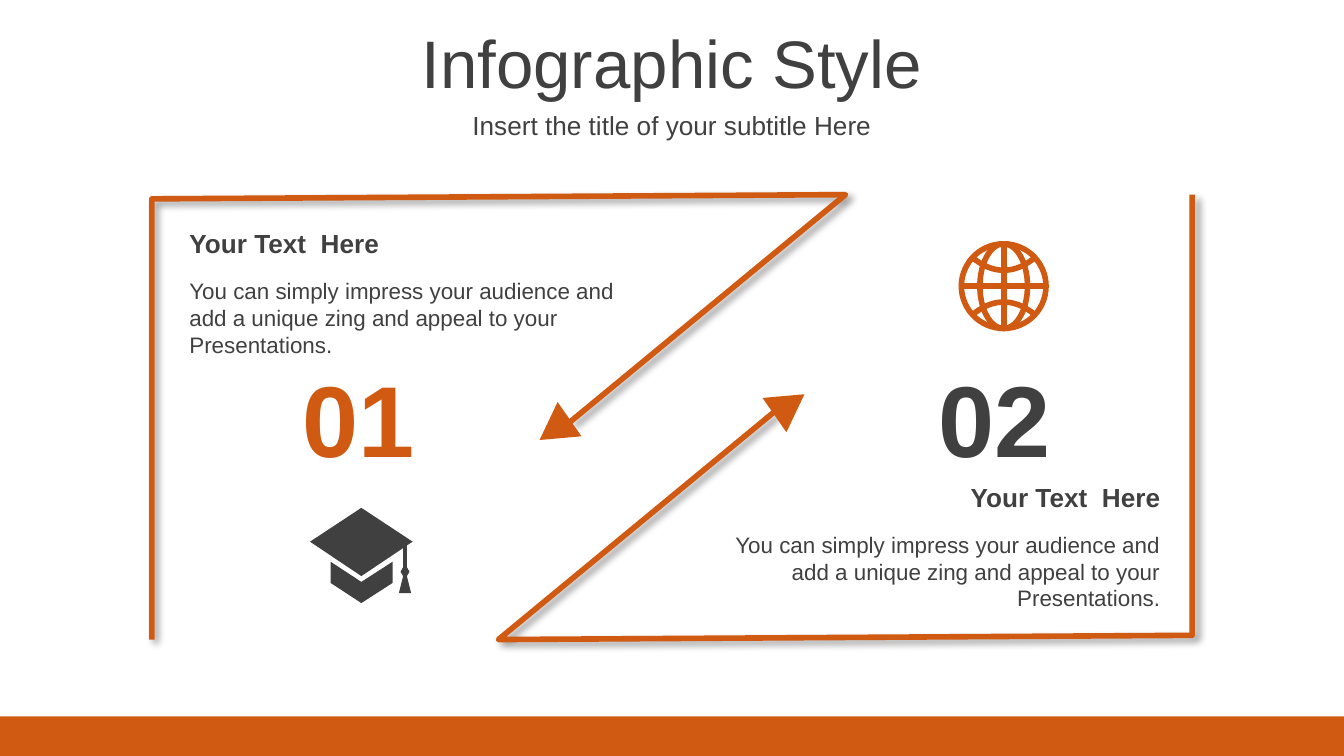
import math

from lxml import etree
from pptx import Presentation
from pptx import util as u
from pptx.dml.color import RGBColor
from pptx.enum import shapes, text
from pptx.oxml.ns import qn

COLORS = {"orange": "D15A12", "dark": "404040", "shadow": "000000"}
LEFT, CENTER, RIGHT = text.PP_ALIGN.LEFT, text.PP_ALIGN.CENTER, text.PP_ALIGN.RIGHT
TOP, MIDDLE = text.MSO_ANCHOR.TOP, text.MSO_ANCHOR.MIDDLE
WIDTH, HEIGHT = 25.4, 14.29

prs = Presentation()
prs.slide_width, prs.slide_height = u.Cm(WIDTH), u.Cm(HEIGHT)
slide = prs.slides.add_slide(prs.slide_layouts[6])


def add_label(words, box, size, color, align, anchor=TOP, bold=False):
    label = slide.shapes.add_textbox(*map(u.Cm, box))
    frame = label.text_frame
    frame.text = words
    frame.word_wrap = True
    frame.vertical_anchor = anchor
    paragraph = frame.paragraphs[0]
    paragraph.alignment = align
    font = paragraph.runs[0].font
    font.name, font.size, font.bold = "Arial", u.Pt(size), bold
    font.color.rgb = RGBColor.from_string(COLORS[color])


def add_outline(contours, color, closed=False):
    """Draw contours given in cm: filled if closed, else stroked at 3 pt."""
    contours = [[(u.Cm(x), u.Cm(y)) for x, y in points] for points in contours]
    builder = slide.shapes.build_freeform(*contours[0][0])
    for index, points in enumerate(contours):
        if index:
            builder.move_to(*points[0])
        builder.add_line_segments(points[1:], close=closed)
    outline = builder.convert_to_shape()
    outline.shadow.inherit = False
    rgb = RGBColor.from_string(COLORS[color])
    if closed:
        outline.fill.solid()
        outline.fill.fore_color.rgb = rgb
        outline.line.fill.background()
    else:
        outline.fill.background()
        outline.line.color.rgb = rgb
        outline.line.width = u.Pt(3)
        etree.SubElement(outline.line._get_or_add_ln(), qn("a:round"))
    return outline


# Footer band
footer = slide.shapes.add_shape(
    shapes.MSO_SHAPE.RECTANGLE, 0, u.Cm(13.54), u.Cm(WIDTH), u.Cm(HEIGHT - 13.54))
footer.shadow.inherit = False
footer.fill.solid()
footer.fill.fore_color.rgb = RGBColor.from_string(COLORS["orange"])
footer.line.fill.background()

# Headings
add_label("Infographic Style", (0, 0.36, WIDTH, 1.6), 36, "dark", CENTER, MIDDLE)
add_label("Insert the title of your subtitle Here", (0, 1.96, WIDTH, 0.79),
          14, "dark", CENTER, MIDDLE)

# Two arrow frames, the second being the first turned by half a circle
frame_points = [(2.87, 12.09), (2.87, 3.76), (15.98, 3.68), (10.77, 7.98)]
head_center, head_width, head_height = (10.48, 8.12), 0.79, 0.69
for half_turn in (False, True):
    path_points = [(WIDTH - x, 15.77 - y) if half_turn else (x, y)
                   for x, y in frame_points + [head_center]]
    arrow_frame = add_outline([path_points[:-1]], "orange")
    effects = arrow_frame._element.spPr.find(qn("a:effectLst"))
    shadow = etree.SubElement(
        effects, qn("a:outerShdw"), blurRad=str(u.Pt(4)), dist=str(u.Pt(3)),
        dir="2700000", algn="tl", rotWithShape="0")
    shade = etree.SubElement(shadow, qn("a:srgbClr"), val=COLORS["shadow"])
    etree.SubElement(shade, qn("a:alpha"), val="40000")

    head_x, head_y = path_points[-1]
    arrow_head = slide.shapes.add_shape(
        shapes.MSO_SHAPE.ISOSCELES_TRIANGLE,
        u.Cm(head_x - head_width / 2), u.Cm(head_y - head_height / 2),
        u.Cm(head_width), u.Cm(head_height))
    arrow_head.rotation = 55.2 if half_turn else 235.2
    arrow_head.shadow.inherit = False
    arrow_head.fill.solid()
    arrow_head.fill.fore_color.rgb = RGBColor.from_string(COLORS["orange"])
    arrow_head.line.fill.background()

# Numbers and descriptions
body = ("You can simply impress your audience and add a unique zing "
        "and appeal to your Presentations.")
for number, number_x, color, text_x, text_y, align in (
        ("01", 5.23, "orange", 3.33, 4.17, LEFT),
        ("02", 17.25, "dark", 13.21, 8.97, RIGHT)):
    add_label(number, (number_x, 6.6, 3.1, 2.57), 54, color, CENTER, MIDDLE, True)
    add_label(body, (text_x, text_y + 0.94, 8.97, 1.8), 12, "dark", align)
    add_label("Your Text  Here", (text_x, text_y, 8.97, 0.86), 14, "dark", align, bold=True)

# Globe: rim, meridian, axis, equator and two parallels
globe_x, globe_y, radius = 18.97, 5.41, 0.8
turns = [math.radians(angle) for angle in range(0, 361, 6)]
globe = [[(globe_x + rx * math.cos(t), globe_y + radius * math.sin(t)) for t in turns]
         for rx in (radius, 0.45)]
globe.append([(globe_x, globe_y - radius), (globe_x, globe_y + radius)])
globe.append([(globe_x - radius, globe_y), (globe_x + radius, globe_y)])
for side in (-1, 1):
    globe.append([(globe_x + 0.058 * step,
                   globe_y + side * (0.3 + 0.23 * (step / 10) ** 2))
                  for step in range(-10, 11)])
add_outline(globe, "orange")

# Graduation cap: base, then board with tassel
cap_base = [(6.25, 10.62), (6.83, 11.0), (7.42, 10.62),
            (7.42, 11.02), (6.83, 11.4), (6.25, 11.02)]
cap_board = [(6.83, 9.6), (7.8, 10.24), (7.69, 10.31), (7.69, 10.72),
             (7.74, 10.81), (7.69, 10.89), (7.77, 11.21), (7.54, 11.21),
             (7.62, 10.89), (7.57, 10.81), (7.62, 10.72), (7.62, 10.36),
             (6.83, 10.89), (5.86, 10.24)]
add_outline([cap_base, cap_board], "dark", closed=True)

prs.save("out.pptx")
